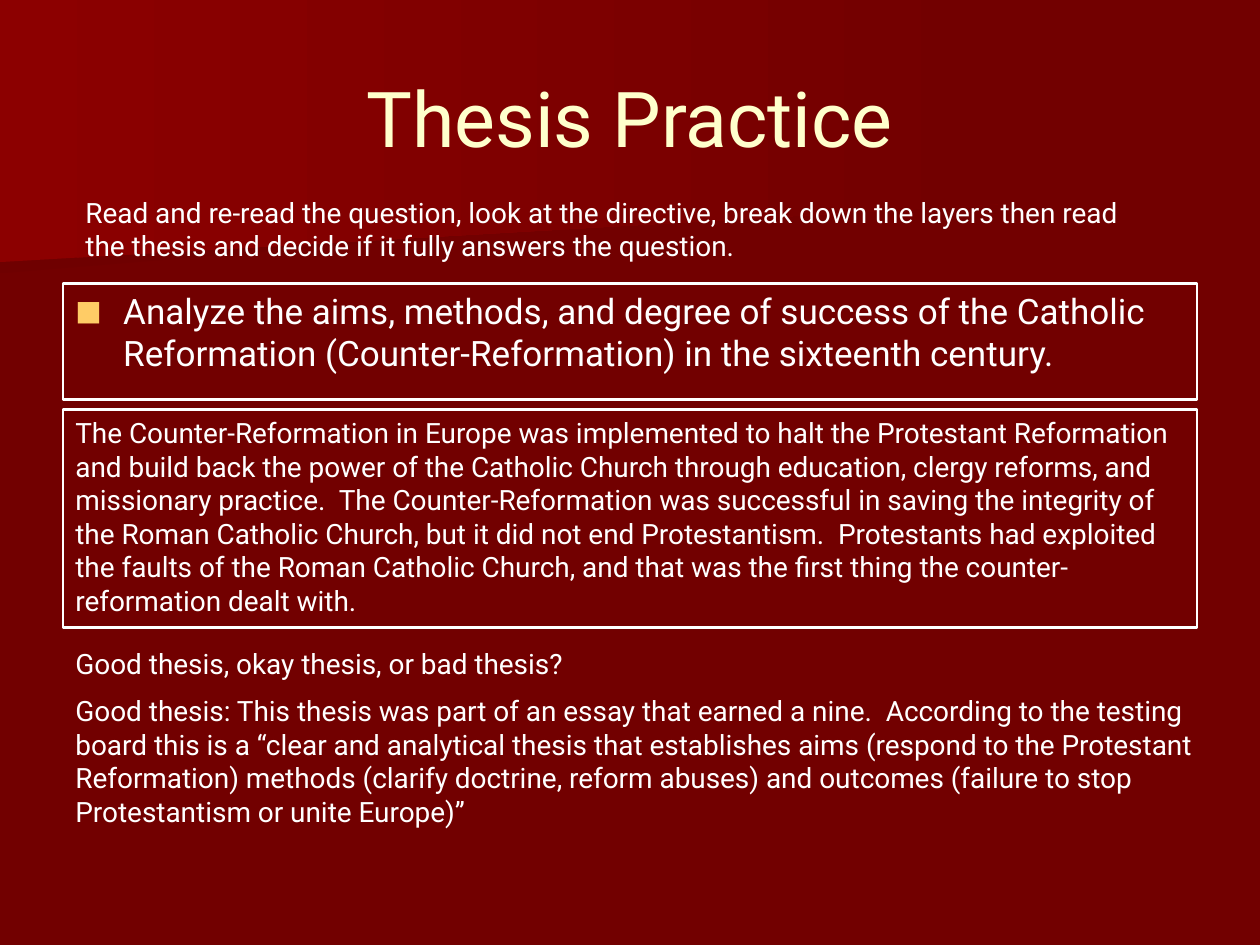
"""Build the Thesis Practice slide."""
from lxml.etree import SubElement
from pptx import Presentation
from pptx.dml.color import RGBColor
from pptx.enum.shapes import MSO_SHAPE as Shape
from pptx.enum.text import MSO_ANCHOR as Anchor, PP_ALIGN as Align
from pptx.oxml.ns import qn
from pptx.util import Inches, Pt

COLORS = {
    "background": "720000",
    "shade": "6F0000",
    "glow": "8C0000",
    "title": "FFFFCC",
    "text": "FFFFFF",
    "bullet": "FFCC66",
}
FONT = "Roboto"
SHADE = [(7.78, 1.53), (0, 2.17), (0, 1.01), (7.79, 1.01), (7.78, 1.28)]
GLOW = [(7.92, 1.62), (0, 2.08), (0, 0), (7.92, 0)]

INSTRUCTIONS = (
    "Read and re-read the question, look at the directive, break down the layers "
    "then read the thesis and decide if it fully answers the question."
)
QUESTION = (
    "Analyze the aims, methods, and degree of success of the Catholic Reformation "
    "(Counter-Reformation) in the sixteenth century."
)
THESIS = (
    "The Counter-Reformation in Europe was implemented to halt the Protestant "
    "Reformation and build back the power of the Catholic Church through education, "
    "clergy reforms, and missionary practice.  The Counter-Reformation was successful "
    "in saving the integrity of the Roman Catholic Church, but it did not end "
    "Protestantism.  Protestants had exploited the faults of the Roman Catholic "
    "Church, and that was the first thing the counter-reformation dealt with."
)
PROMPT = "Good thesis, okay thesis, or bad thesis?"
VERDICT = (
    "Good thesis: This thesis was part of an essay that earned a nine.  According to "
    "the testing board this is a “clear and analytical thesis that establishes aims "
    "(respond to the Protestant Reformation) methods (clarify doctrine, reform abuses) "
    "and outcomes (failure to stop Protestantism or unite Europe)”"
)


def rgb(name):
    return RGBColor.from_string(COLORS[name])


def add_band(slide, points, start_color):
    start, *rest = [(Inches(x), Inches(y)) for x, y in points]
    builder = slide.shapes.build_freeform(*start)
    builder.add_line_segments(rest, close=True)
    band = builder.convert_to_shape()
    band.shadow.inherit = False
    band.line.fill.background()
    band.fill.gradient()
    band.fill.gradient_angle = 0
    for stop, name in zip(band.fill.gradient_stops, (start_color, "background")):
        stop.color.rgb = rgb(name)


def fill_text(shape, texts, size=16, color="text", align=Align.LEFT, anchor=Anchor.TOP):
    frame = shape.text_frame
    frame.word_wrap = True
    frame.vertical_anchor = anchor
    for index, text in enumerate(texts):
        paragraph = frame.add_paragraph() if index else frame.paragraphs[0]
        paragraph.alignment = align
        paragraph.space_before = Pt(size / 2 if index else 0)
        run = paragraph.add_run()
        run.text = text
        run.font.color.rgb = rgb(color)
        for name, value in {"name": FONT, "size": Pt(size)}.items():
            setattr(run.font, name, value)


def add_text(slide, box, texts, **style):
    shape = slide.shapes.add_textbox(*map(Inches, box))
    fill_text(shape, texts, **style)


def add_frame(slide, box, text, **style):
    shape = slide.shapes.add_shape(Shape.RECTANGLE, *map(Inches, box))
    shape.shadow.inherit = False
    shape.fill.background()
    shape.line.color.rgb = rgb("text")
    shape.line.width = Pt(1.5)
    fill_text(shape, [text], **style)
    return shape


def add_bullet(paragraph, indent):
    properties = paragraph._p.get_or_add_pPr()
    properties.set("marL", str(indent))
    properties.set("indent", str(-indent))
    color = SubElement(properties, qn("a:buClr"))
    SubElement(color, qn("a:srgbClr"), val=COLORS["bullet"])
    SubElement(properties, qn("a:buSzPct"), val="80000")
    SubElement(properties, qn("a:buFont"), typeface=FONT)
    SubElement(properties, qn("a:buChar"), char="■")


def main():
    presentation = Presentation()
    presentation.slide_width = Inches(10)
    presentation.slide_height = Inches(7.5)
    slide = presentation.slides.add_slide(presentation.slide_layouts[6])
    slide.background.fill.solid()
    slide.background.fill.fore_color.rgb = rgb("background")

    add_band(slide, SHADE, "shade")
    add_band(slide, GLOW, "glow")
    add_text(slide, (0.5, 0.3, 9, 1.25), ["Thesis Practice"], size=44,
             color="title", align=Align.CENTER, anchor=Anchor.MIDDLE)
    question = add_frame(slide, (0.5, 2.25, 9, 0.92), QUESTION, size=20)
    add_bullet(question.text_frame.paragraphs[0], Inches(0.38))
    add_frame(slide, (0.5, 3.25, 9, 1.73), THESIS)
    add_text(slide, (0.5, 5.08, 9.08, 1.57), [PROMPT, VERDICT])
    add_text(slide, (0.58, 1.5, 8.75, 0.64), [INSTRUCTIONS])
    presentation.save("out.pptx")


if __name__ == "__main__":
    main()
